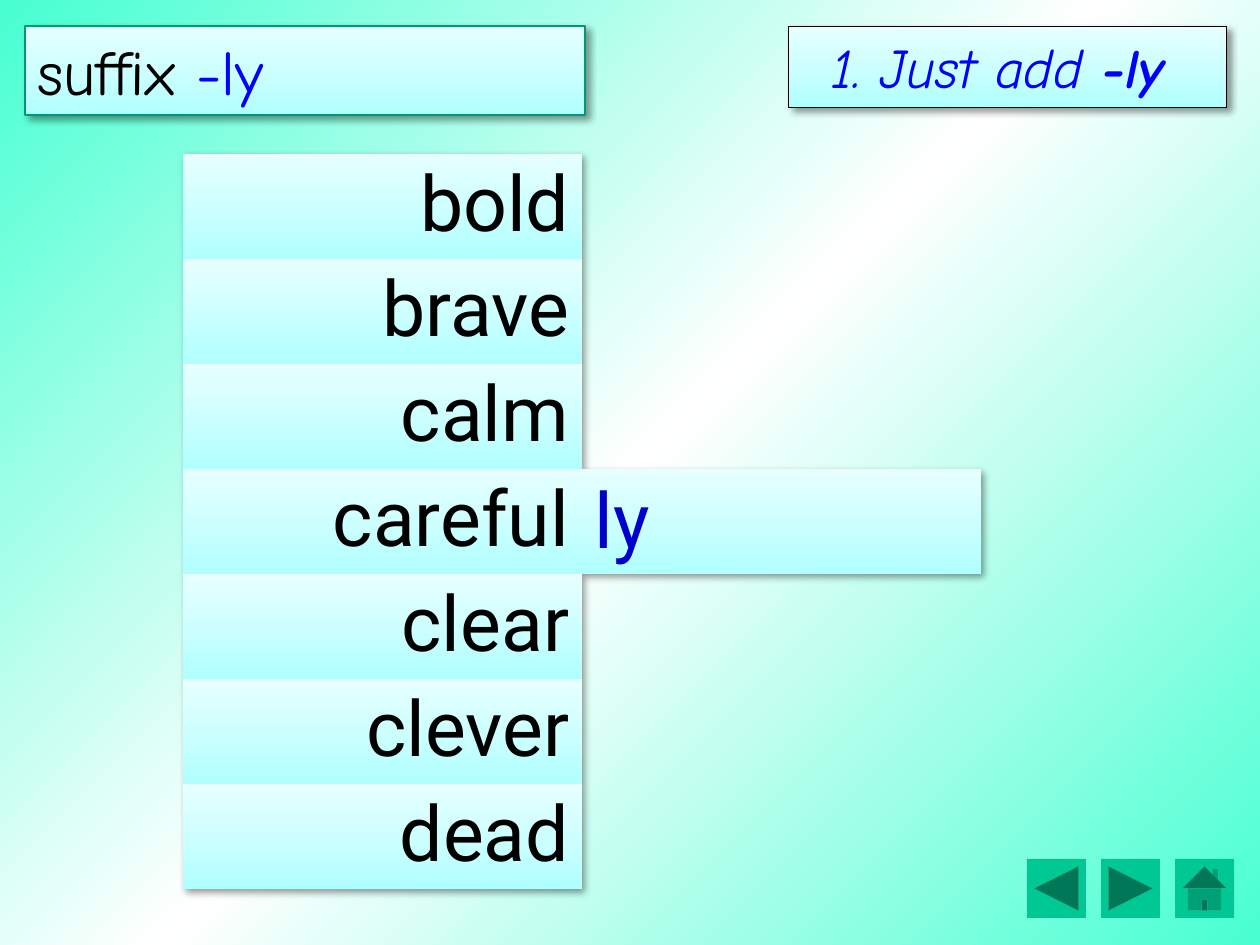
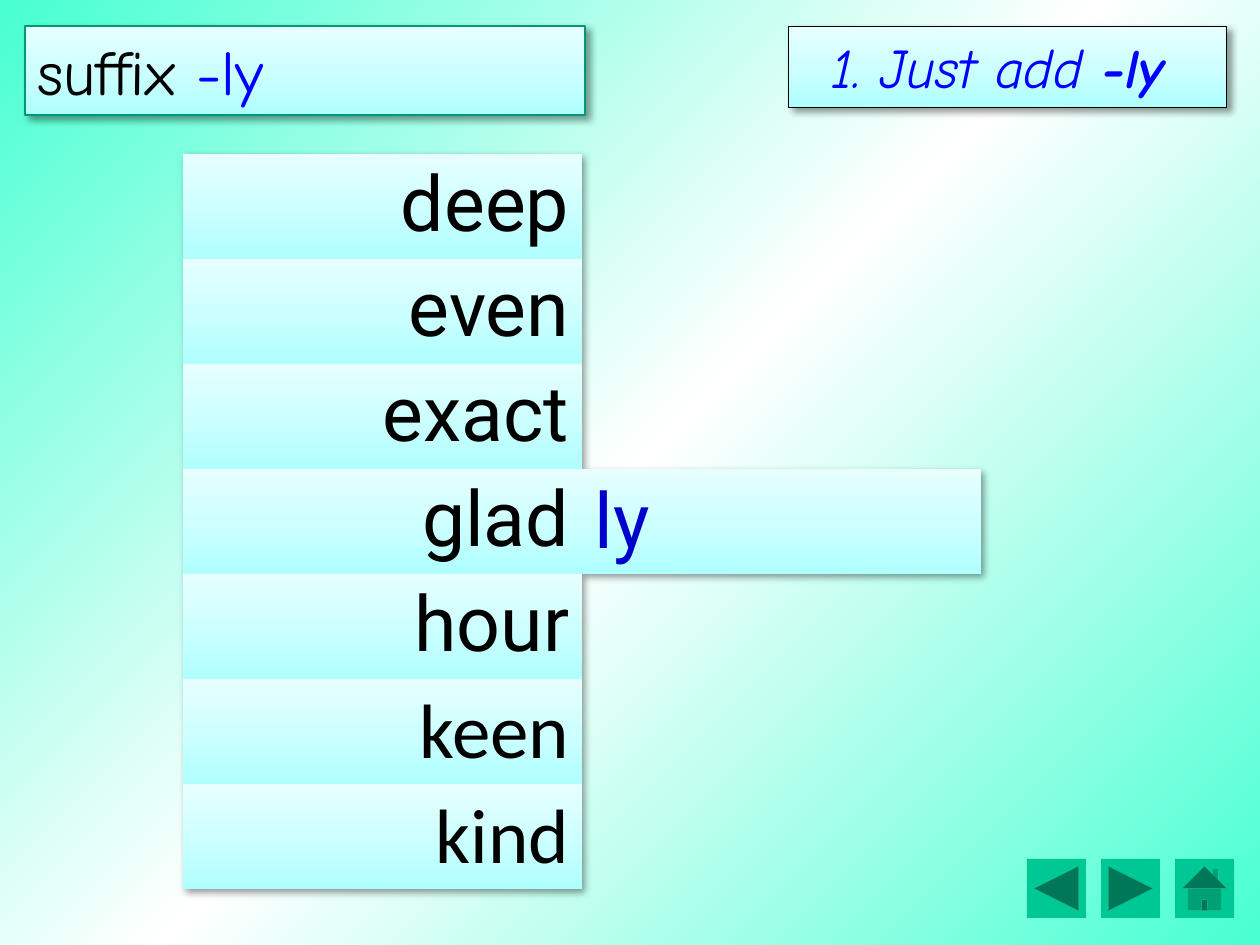
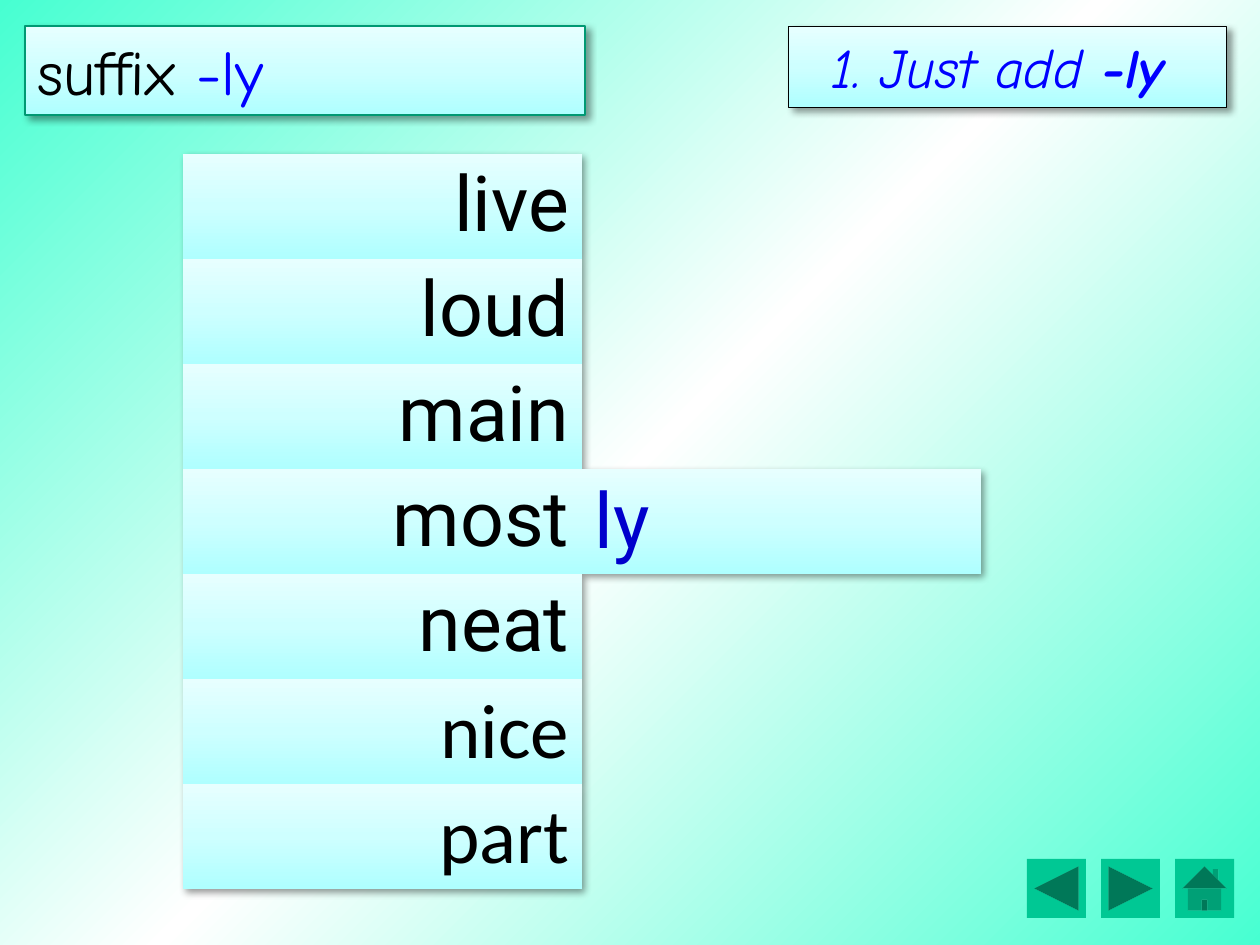
from dataclasses import dataclass

from lxml.etree import SubElement
from pptx import Presentation
from pptx.dml.color import RGBColor
from pptx.enum.shapes import MSO_SHAPE as Shape
from pptx.enum.text import MSO_ANCHOR as Anchor
from pptx.enum.text import MSO_AUTO_SIZE as AutoSize
from pptx.enum.text import PP_ALIGN as Align
from pptx.oxml.ns import qn
from pptx.util import Emu, Pt

PX_PER_INCH = 126
EMU_PER_PX = 914400 / PX_PER_INCH

BLACK = "000000"
BLUE = "0000FF"
SUFFIX_BLUE = "0000CC"
BUTTON_GREEN = "00C894"
TITLE_LINE = "009973"
MINT_STOPS = ("47FFD1", "FFFFFF", "47FFD1")
AQUA_STOPS = ("AFFFFF", "CEFFFF", "E7FFFF")

DISPLAY_FONT = "Comic Neue"
WORD_FONT = "Roboto"
LATE_WORD_FONT = "Calibri"
PLAIN_TABLE_STYLE = "{2D5ABB26-0587-4C30-8999-92F81FD0307C}"

TABLE_LEFT, TABLE_TOP = 183, 154
COLUMN_WIDTH, ROW_HEIGHT = 399, 105
SUFFIX_ROW = 3

BUTTON_LEFT, BUTTON_TOP = 1027, 859
BUTTON_SIZE, BUTTON_STEP = 59, 74
BUTTONS = (Shape.ACTION_BUTTON_BACK_OR_PREVIOUS,
           Shape.ACTION_BUTTON_FORWARD_OR_NEXT,
           Shape.ACTION_BUTTON_HOME)


@dataclass(frozen=True)
class Run:
    text: str
    size: int
    color: str = BLACK
    font: str = DISPLAY_FONT
    bold: bool = False
    italic: bool = False


@dataclass(frozen=True)
class Banner:
    left: int
    top: int
    width: int
    height: int
    line: str
    line_pt: float
    align: Align
    wrap: bool
    runs: tuple[Run, ...]


@dataclass(frozen=True)
class WordList:
    words: tuple[str, ...]
    calibri_from: int = 7


TITLE = Banner(25, 26, 560, 89, TITLE_LINE, 0.75, Align.LEFT, True,
               (Run("suffix ", 36), Run("-ly", 36, BLUE)))
RULE = Banner(789, 26, 438, 81, BLACK, 0.5, Align.CENTER, False,
              (Run("1. Just add ", 32, BLUE, italic=True),
               Run("-ly ", 32, BLUE, bold=True, italic=True)))

WORD_LISTS = (
    WordList(("bold", "brave", "calm", "careful", "clear", "clever", "dead")),
    WordList(("deep", "even", "exact", "glad", "hour", "keen", "kind"), 5),
    WordList(("live", "loud", "main", "most", "neat", "nice", "part"), 5),
)


def px(n: int) -> Emu:
    return Emu(round(n * EMU_PER_PX))


def rgb(value: str) -> RGBColor:
    return RGBColor.from_string(value)


def add_gradient(fill, parent, stops: tuple[str, ...], angle: int) -> None:
    """Fill with evenly spaced stops; angle is counter-clockwise."""
    fill.gradient()
    fill.gradient_angle = angle
    gs_list = next(parent.iter(qn("a:gsLst")))
    gs_list.clear()
    for i, color in enumerate(stops):
        gs = SubElement(gs_list, qn("a:gs"),
                        pos=str(100000 * i // (len(stops) - 1)))
        SubElement(gs, qn("a:srgbClr"), val=color)


def add_shadow(effects) -> None:
    """Put the soft lower-right shadow into an a:effectLst."""
    shadow = SubElement(effects, qn("a:outerShdw"), blurRad=str(Pt(4)),
                        dist=str(Pt(3)), dir=str(45 * 60000),
                        algn="tl", rotWithShape="0")
    color = SubElement(shadow, qn("a:srgbClr"), val=BLACK)
    SubElement(color, qn("a:alpha"), val="40000")


def add_runs(tf, runs: tuple[Run, ...], align: Align) -> None:
    p = tf.paragraphs[0]
    p.alignment = align
    for run in runs:
        r = p.add_run()
        r.text = run.text
        r.font.name = run.font
        r.font.size = Pt(run.size)
        r.font.bold = run.bold
        r.font.italic = run.italic
        r.font.color.rgb = rgb(run.color)


def add_buttons(s) -> None:
    for i, kind in reversed(list(enumerate(BUTTONS))):
        sp = s.shapes.add_shape(kind, px(BUTTON_LEFT + i * BUTTON_STEP),
                                px(BUTTON_TOP), px(BUTTON_SIZE),
                                px(BUTTON_SIZE))
        sp.shadow.inherit = False
        sp.fill.solid()
        sp.fill.fore_color.rgb = rgb(BUTTON_GREEN)
        sp.line.fill.background()


def add_banner(s, banner: Banner) -> None:
    sp = s.shapes.add_shape(Shape.RECTANGLE, px(banner.left), px(banner.top),
                            px(banner.width), px(banner.height))
    add_gradient(sp.fill, sp.element, AQUA_STOPS, 90)
    sp.line.color.rgb = rgb(banner.line)
    sp.line.width = Pt(banner.line_pt)
    sp.shadow.inherit = False
    add_shadow(next(sp.element.iter(qn("a:effectLst"))))
    tf = sp.text_frame
    tf.word_wrap = banner.wrap
    tf.auto_size = AutoSize.SHAPE_TO_FIT_TEXT
    tf.vertical_anchor = Anchor.TOP
    add_runs(tf, banner.runs, banner.align)


def fill_cell(cell, run: Run, align: Align, anchor: Anchor) -> None:
    add_gradient(cell.fill, cell._tc, AQUA_STOPS, 90)
    cell.vertical_anchor = anchor
    cell.margin_bottom = px(4)
    add_runs(cell.text_frame, (run,), align)


def add_word_table(s, word_list: WordList) -> None:
    rows = len(word_list.words)
    frame = s.shapes.add_table(rows, 2, px(TABLE_LEFT), px(TABLE_TOP),
                               px(2 * COLUMN_WIDTH), px(rows * ROW_HEIGHT))
    table = frame.table
    table.first_row = False
    table.horz_banding = False
    props = next(frame.element.iter(qn("a:tblPr")))
    props.find(qn("a:tableStyleId")).text = PLAIN_TABLE_STYLE
    effects = SubElement(props, qn("a:effectLst"))
    props.insert(0, effects)
    add_shadow(effects)
    for i, word in enumerate(word_list.words):
        font = LATE_WORD_FONT if i >= word_list.calibri_from else WORD_FONT
        fill_cell(table.cell(i, 0), Run(word, 44, font=font),
                  Align.RIGHT, Anchor.TOP)
        if i == SUFFIX_ROW:
            fill_cell(table.cell(i, 1), Run("ly", 44, SUFFIX_BLUE, WORD_FONT),
                      Align.LEFT, Anchor.MIDDLE)
        else:
            table.cell(i, 1).fill.background()


def add_word_slide(prs, word_list: WordList) -> None:
    s = prs.slides.add_slide(prs.slide_layouts[6])
    add_gradient(s.background.fill, s.element, MINT_STOPS, 315)
    add_buttons(s)
    add_banner(s, TITLE)
    add_word_table(s, word_list)
    add_banner(s, RULE)


def main() -> None:
    prs = Presentation()
    prs.slide_width, prs.slide_height = px(1260), px(945)
    for word_list in WORD_LISTS:
        add_word_slide(prs, word_list)
    prs.save("out.pptx")


if __name__ == "__main__":
    main()
